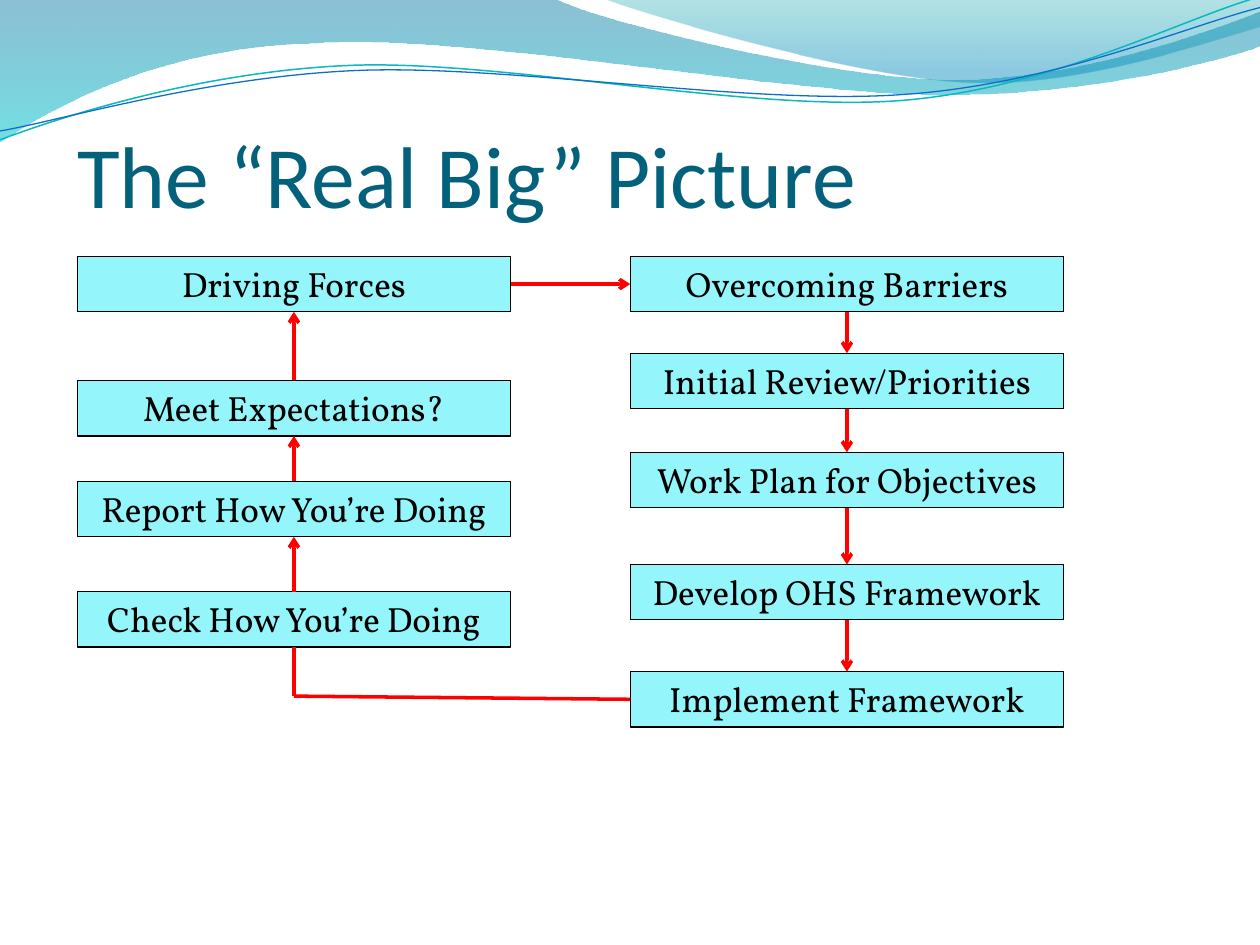
from lxml import etree
from pptx import Presentation
from pptx import util as u
from pptx.dml.color import RGBColor
from pptx.enum import shapes, text
from pptx.oxml.ns import qn

COLS, ROWS = 100, 75  # grid units across and down the slide
BOX_WIDTH, BOX_HEIGHT = 34.4, 4.4
TOP, LEFT, BOTTOM, RIGHT = range(4)  # connection sites of a rectangle

TITLE_BLUE = RGBColor(0x04, 0x61, 0x7B)
BOX_CYAN = RGBColor(0x94, 0xF5, 0xFA)
BLACK = RGBColor(0, 0, 0)
ARROW_RED = RGBColor(0xFF, 0, 0)
DEEP_BLUE = RGBColor(0x00, 0x74, 0xA1)
TURQUOISE = RGBColor(0x00, 0xC6, 0xCF)
TEAL = RGBColor(0x00, 0xA1, 0xA9)
SKY_BLUE = RGBColor(0x00, 0x8B, 0xBF)
LINE_TEAL = RGBColor(0x0A, 0xB8, 0xBF)
LINE_BLUE = RGBColor(0x0F, 0x6F, 0xC6)

# Outlines in hundredths of an inch: two numbers are a straight step, six a Bézier step.
BROAD_WAVE = [(0, 0), (440, -1), (476, 17, 664, 63, 758, 63),
              (853, 63, 958, 26, 1000, 9), (1001, 36),
              (983, 44, 870, 76, 746, 75), (622, 75, 382, 28, 257, 34),
              (129, 36, 46, 83, -1, 113)]
CORNER_WAVE = [(479, -1), (509, 11, 682, 62, 769, 65),
               (856, 69, 961, 32, 1000, 21), (1000, 0)]
TEAL_STROKE = [(0, 111), (48, 93, 158, 57, 277, 52),
               (395, 47, 593, 89, 713, 80), (833, 71, 938, 15, 998, -2)]
BLUE_STROKE = [(0, 104), (47, 96, 164, 61, 283, 56),
               (403, 51, 597, 84, 717, 75), (836, 67, 941, 21, 1000, 6)]

# Both columns in the order of the cycle: label and top row.
RIGHT_STEPS = [("Overcoming Barriers", 20.35), ("Initial Review/Priorities", 28.03),
               ("Work Plan for Objectives", 35.9),
               ("Develop OHS Framework", 44.8), ("Implement Framework", 53.3)]
LEFT_STEPS = [("Check How You’re Doing", 46.95), ("Report How You’re Doing", 38.2),
              ("Meet Expectations?", 30.2), ("Driving Forces", 20.35)]


def bend(shape, steps):
    """Join the three straight segments of each Bézier step into one curve."""
    segments = iter(list(shape.element.iter(qn("a:lnTo"))))
    for step in steps[1:]:
        group = [next(segments) for _ in range(len(step) // 2)]
        if len(group) == 3:
            curve = etree.Element(qn("a:cubicBezTo"))
            group[0].addprevious(curve)
            for segment in group:
                curve.append(segment[0])
                segment.getparent().remove(segment)


class Deck:
    title_font, label_font = "Calibri", "Vollkorn"
    title_size, label_size = u.Pt(50), u.Pt(20)

    def __init__(self):
        self.prs = Presentation()
        self.prs.slide_width, self.prs.slide_height = u.Inches(10), u.Inches(7.5)
        self.slide = self.prs.slides.add_slide(self.prs.slide_layouts[5])

    def x(self, cols):
        return round(self.prs.slide_width * cols / COLS)

    def y(self, rows):
        return round(self.prs.slide_height * rows / ROWS)

    def curve(self, steps, closed):
        points = [step[i:i + 2] for step in steps for i in range(0, len(step), 2)]
        builder = self.slide.shapes.build_freeform(*points[0], scale=u.Inches(0.01))
        builder.add_line_segments(points[1:], close=closed)
        shape = builder.convert_to_shape()
        bend(shape, steps)
        shape.shadow.inherit = False
        return shape

    def wave(self, steps, *stops):
        """Filled curve; each stop is (position, colour, opacity percent)."""
        shape = self.curve(steps, True)
        shape.line.fill.background()
        shape.fill.gradient()
        shape.fill.gradient_angle = 270
        for stop, (position, color, _) in zip(shape.fill.gradient_stops, stops):
            stop.position = position
            stop.color.rgb = color
        for element, (_, _, opacity) in zip(shape.element.iter(qn("a:gs")), stops):
            etree.SubElement(element[0], qn("a:alpha"), val=str(opacity * 1000))

    def stroke(self, steps, color, width):
        shape = self.curve(steps, False)
        shape.fill.background()
        shape.line.color.rgb = color
        shape.line.width = u.Pt(width)

    def title(self, words):
        heading = self.slide.shapes.title
        heading.left, heading.top = self.x(6.13), self.y(5.45)
        heading.width, heading.height = self.x(90), self.y(12.5)
        heading.element.getparent().append(heading.element)  # in front of the waves
        frame = heading.text_frame
        frame.text = words
        frame.vertical_anchor = text.MSO_ANCHOR.BOTTOM
        frame.auto_size = text.MSO_AUTO_SIZE.NONE
        frame.margin_left = frame.margin_right = frame.margin_bottom = 0
        frame.margin_top = u.Inches(0.05)
        self.style(frame.paragraphs[0], text.PP_ALIGN.LEFT,
                   self.title_font, self.title_size, TITLE_BLUE)

    def style(self, paragraph, align, name, size, color):
        paragraph.alignment = align
        font = paragraph.font
        font.name, font.size, font.color.rgb = name, size, color

    def box(self, label, col, row):
        shape = self.slide.shapes.add_shape(
            shapes.MSO_SHAPE.RECTANGLE, self.x(col), self.y(row),
            self.x(BOX_WIDTH), self.y(BOX_HEIGHT))
        shape.shadow.inherit = False
        shape.fill.solid()
        shape.fill.fore_color.rgb = BOX_CYAN
        shape.line.color.rgb = BLACK
        shape.line.width = u.Pt(0.75)
        frame = shape.text_frame
        frame.text = label
        frame.word_wrap = True
        frame.vertical_anchor = text.MSO_ANCHOR.TOP
        frame.auto_size = text.MSO_AUTO_SIZE.SHAPE_TO_FIT_TEXT
        self.style(frame.paragraphs[0], text.PP_ALIGN.CENTER,
                   self.label_font, self.label_size, BLACK)
        return shape

    def line(self, start, site, col=0, row=0):
        """Red line from a site of a box to a grid point."""
        x, y = self.x(col), self.y(row)
        connector = self.slide.shapes.add_connector(
            shapes.MSO_CONNECTOR.STRAIGHT, x, y, x, y)
        connector.begin_connect(start, site)
        connector.line.color.rgb = ARROW_RED
        connector.line.width = u.Pt(2)
        etree.SubElement(connector.element.spPr, qn("a:effectLst"))
        return connector

    def arrow(self, start, start_site, end, end_site):
        connector = self.line(start, start_site)
        connector.end_connect(end, end_site)
        outline = connector.element.spPr.find(qn("a:ln"))
        etree.SubElement(outline, qn("a:tailEnd"), type="arrow")


def main():
    deck = Deck()
    deck.wave(BROAD_WAVE, (0, DEEP_BLUE, 45), (1, TURQUOISE, 55))
    deck.wave(CORNER_WAVE, (0, TEAL, 30), (0.8, SKY_BLUE, 45))
    deck.stroke(TEAL_STROKE, LINE_TEAL, 0.85)
    deck.stroke(BLUE_STROKE, LINE_BLUE, 0.75)
    deck.title("The “Real Big” Picture")

    left_col, right_col = 6.13, 50.02
    plan = [deck.box(label, right_col, row) for label, row in RIGHT_STEPS]
    review = [deck.box(label, left_col, row) for label, row in LEFT_STEPS]

    deck.arrow(review[-1], RIGHT, plan[0], LEFT)
    for upper, lower in zip(plan, plan[1:]):
        deck.arrow(upper, BOTTOM, lower, TOP)
    for lower, upper in zip(review, review[1:]):
        deck.arrow(lower, TOP, upper, BOTTOM)

    corner = left_col + BOX_WIDTH / 2, 55.25
    deck.line(plan[-1], LEFT, *corner)
    deck.line(review[0], BOTTOM, *corner)
    deck.prs.save("out.pptx")


if __name__ == "__main__":
    main()
